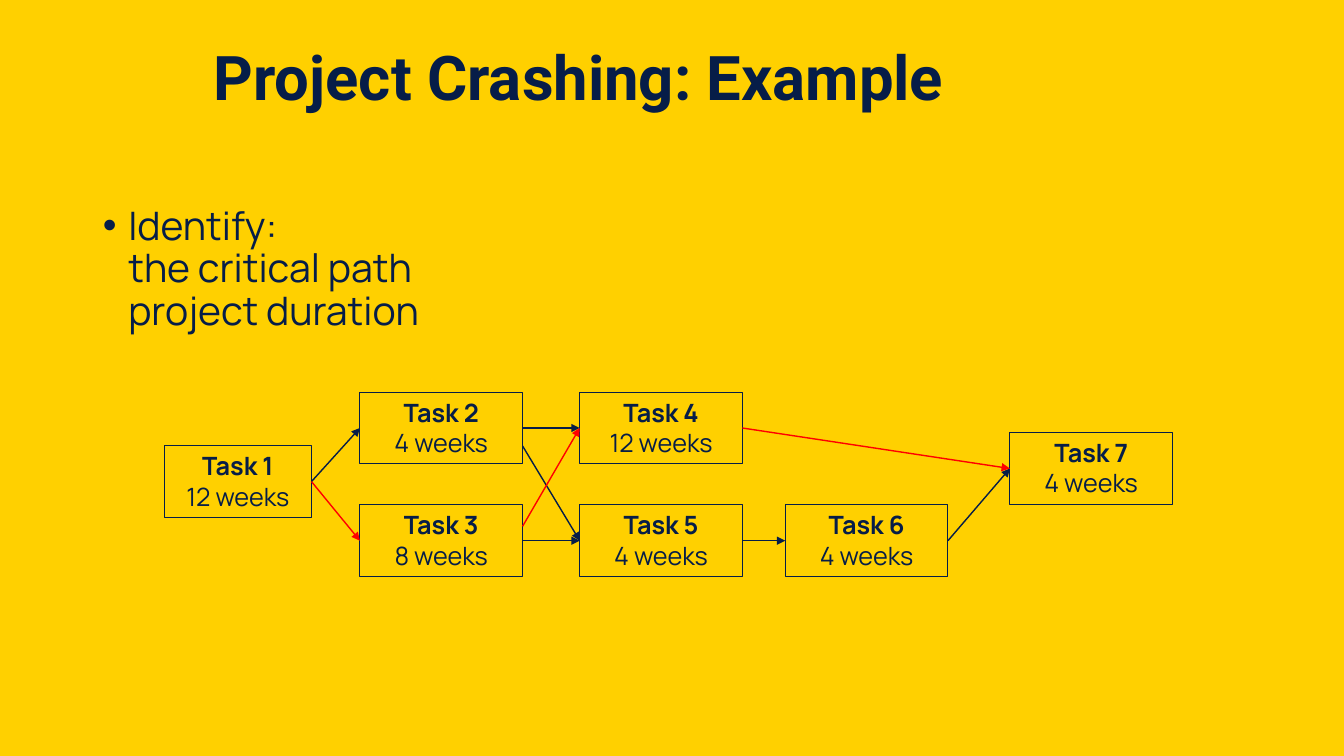
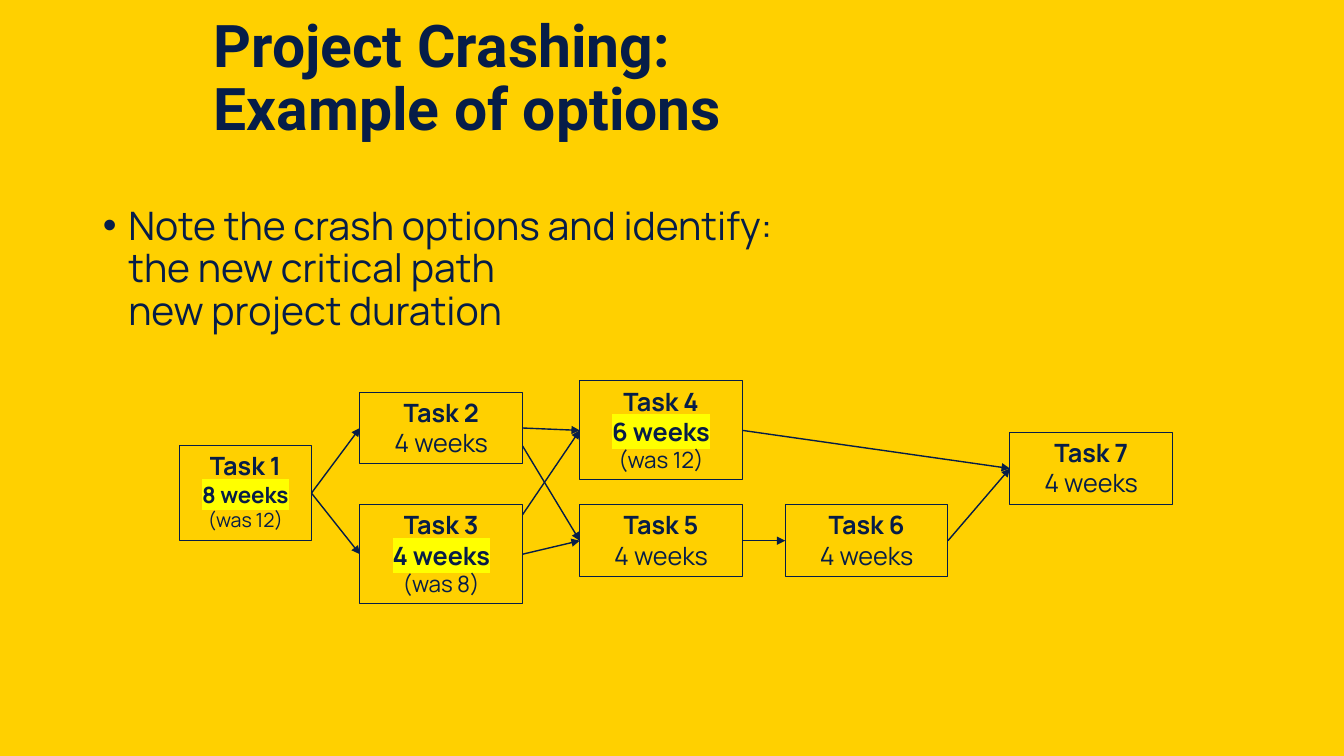
from dataclasses import dataclass

from lxml import etree
from pptx import Presentation
from pptx.dml.color import RGBColor
from pptx.enum.shapes import MSO_CONNECTOR, MSO_SHAPE
from pptx.enum.text import MSO_ANCHOR, PP_ALIGN
from pptx.oxml.ns import qn
from pptx.util import Cm, Pt

RECTANGLE = MSO_SHAPE.RECTANGLE
STRAIGHT = MSO_CONNECTOR.STRAIGHT
TOP, MIDDLE = MSO_ANCHOR.TOP, MSO_ANCHOR.MIDDLE
LEFT, CENTER = PP_ALIGN.LEFT, PP_ALIGN.CENTER
LEFT_SIDE, RIGHT_SIDE = 1, 3


@dataclass(frozen=True)
class Theme:
    background: RGBColor = RGBColor(0xFF, 0xD0, 0x00)
    navy: RGBColor = RGBColor(0x06, 0x1D, 0x48)
    critical: RGBColor = RGBColor(0xFF, 0x00, 0x00)
    highlight: str = "FFFF00"
    title_font: str = "Roboto"
    text_font: str = "Manrope"
    body_size: int = 28
    task_size: int = 18
    box_line: float = 0.75
    arrow_line: float = 1


THEME = Theme()

# Lengths in centimetres
COLUMNS = {"a": 9.07, "b": 14.61, "c": 19.79, "d": 25.45}
UPPER, LOWER, LAST = 9.88, 12.72, 10.9
BOX_WIDTH, BOX_HEIGHT, CRASHED_HEIGHT = 4.1, 1.81, 2.49

# task: (left, top, width, height)
PLACES = {
    1: (4.14, 11.23, 3.71, BOX_HEIGHT),
    2: (COLUMNS["a"], UPPER, BOX_WIDTH, BOX_HEIGHT),
    3: (COLUMNS["a"], LOWER, BOX_WIDTH, BOX_HEIGHT),
    4: (COLUMNS["b"], UPPER, BOX_WIDTH, BOX_HEIGHT),
    5: (COLUMNS["b"], LOWER, BOX_WIDTH, BOX_HEIGHT),
    6: (COLUMNS["c"], LOWER, BOX_WIDTH, BOX_HEIGHT),
    7: (COLUMNS["d"], LAST, BOX_WIDTH, BOX_HEIGHT),
}
CRASHED_PLACES = PLACES | {
    1: (4.52, 11.23, 3.33, 2.39),
    3: (COLUMNS["a"], LOWER, BOX_WIDTH, CRASHED_HEIGHT),
    4: (COLUMNS["b"], 9.6, BOX_WIDTH, CRASHED_HEIGHT),
}

WEEKS = {1: 12, 2: 4, 3: 8, 4: 12, 5: 4, 6: 4, 7: 4}
DEPENDENCIES = [(1, 2), (2, 4), (2, 5), (3, 5), (5, 6), (6, 7),
                (1, 3), (3, 4), (4, 7)]

# exits: share of the box height at which an off-centre arrow leaves
# crashed: task -> (new weeks, size of new weeks, size of old weeks)
SLIDES = [
    {
        "title": "Project Crashing: Example",
        "title_width": 24.94,
        "title_size": 44,
        "body": "Identify:\vthe critical path\vproject duration",
        "places": PLACES,
        "crashed": {},
        "critical": [(1, 3), (3, 4), (4, 7)],
        "exits": {(2, 5): 0.75, (3, 4): 0.3},
    },
    {
        "title": "Project Crashing: Example of options",
        "title_width": 17.12,
        "title_size": 42,
        "body": "Note the crash options and identify:\v"
                "the new critical path\vnew project duration",
        "places": CRASHED_PLACES,
        "crashed": {1: (8, 16, 14), 3: (4, 18, 16), 4: (6, 18, 16)},
        "critical": [],
        "exits": {(2, 5): 0.75, (3, 4): 0.1},
    },
]


def place(shape, left, top, width, height):
    shape.left, shape.top = Cm(left), Cm(top)
    shape.width, shape.height = Cm(width), Cm(height)


def style_runs(paragraph, font_name, size, bold=False):
    for run in paragraph.runs:
        run.font.name = font_name
        run.font.size = Pt(size)
        run.font.bold = bold
        run.font.color.rgb = THEME.navy


def highlight(run):
    fill = run.font._element.find(qn("a:solidFill"))
    mark = etree.Element(qn("a:highlight"))
    etree.SubElement(mark, qn("a:srgbClr"), val=THEME.highlight)
    fill.addnext(mark)


def add_title(slide, content):
    title = slide.shapes.title
    place(title, 5.13, 0.18, content["title_width"], 3.68)
    title.text_frame.text = content["title"]
    title.text_frame.vertical_anchor = MIDDLE
    paragraph = title.text_frame.paragraphs[0]
    paragraph.alignment = LEFT
    paragraph.line_spacing = 0.9
    style_runs(paragraph, THEME.title_font, content["title_size"], bold=True)


def add_body(slide, text):
    body = slide.placeholders[1]
    place(body, 2.34, 5.08, 29.21, 12.09)
    body.text_frame.text = text
    paragraph = body.text_frame.paragraphs[0]
    paragraph.line_spacing = 0.9
    paragraph.space_before = Pt(0)
    properties = paragraph._p.get_or_add_pPr()
    properties.set("marL", str(Cm(0.64)))
    properties.set("indent", str(-Cm(0.64)))
    etree.SubElement(properties, qn("a:buFont"), typeface="Arial")
    etree.SubElement(properties, qn("a:buChar"), char="•")
    style_runs(paragraph, THEME.text_font, THEME.body_size)


def task_lines(task, crashed):
    """Return (text, size, bold, highlighted) for each line of a task box."""
    lines = [(f"Task {task}", THEME.task_size, True, False)]
    if task in crashed:
        weeks, new_size, old_size = crashed[task]
        lines.append((f"{weeks} weeks", new_size, True, True))
        lines.append((f"(was {WEEKS[task]})", old_size, False, False))
    else:
        lines.append((f"{WEEKS[task]} weeks", THEME.task_size, False, False))
    return lines


def add_task(slide, position, lines):
    box = slide.shapes.add_shape(RECTANGLE, *(Cm(value) for value in position))
    box.shadow.inherit = False
    box.fill.background()
    box.line.color.rgb = THEME.navy
    box.line.width = Pt(THEME.box_line)
    frame = box.text_frame
    frame.word_wrap = True
    frame.vertical_anchor = TOP
    frame.text = "\n".join(line[0] for line in lines)
    for paragraph, (_, size, bold, marked) in zip(frame.paragraphs, lines):
        paragraph.alignment = CENTER
        style_runs(paragraph, THEME.text_font, size, bold)
        if marked:
            highlight(paragraph.runs[0])
    return box


def add_arrow(slide, source, target, color, exit_share=None):
    """Join two boxes, leaving mid-side unless exit_share is given."""
    share = 0.5 if exit_share is None else exit_share
    arrow = slide.shapes.add_connector(
        STRAIGHT,
        source.left + source.width, source.top + int(source.height * share),
        target.left, target.top + target.height // 2)
    if exit_share is None:
        arrow.begin_connect(source, RIGHT_SIDE)
    arrow.end_connect(target, LEFT_SIDE)
    arrow.line.color.rgb = color
    arrow.line.width = Pt(THEME.arrow_line)
    etree.SubElement(arrow.line._get_or_add_ln(), qn("a:tailEnd"),
                     type="triangle")
    etree.SubElement(arrow._element.spPr, qn("a:effectLst"))


def add_network(slide, content):
    boxes = {task: add_task(slide, position,
                            task_lines(task, content["crashed"]))
             for task, position in content["places"].items()}
    for link in DEPENDENCIES:
        source, target = link
        color = THEME.critical if link in content["critical"] else THEME.navy
        add_arrow(slide, boxes[source], boxes[target], color,
                  content["exits"].get(link))


def main():
    deck = Presentation()
    deck.slide_width, deck.slide_height = Cm(33.87), Cm(19.05)
    backdrop = deck.slide_master.background.fill
    backdrop.solid()
    backdrop.fore_color.rgb = THEME.background
    for content in SLIDES:
        slide = deck.slides.add_slide(deck.slide_layouts[1])
        add_title(slide, content)
        add_body(slide, content["body"])
        add_network(slide, content)
    deck.save("out.pptx")


if __name__ == "__main__":
    main()
